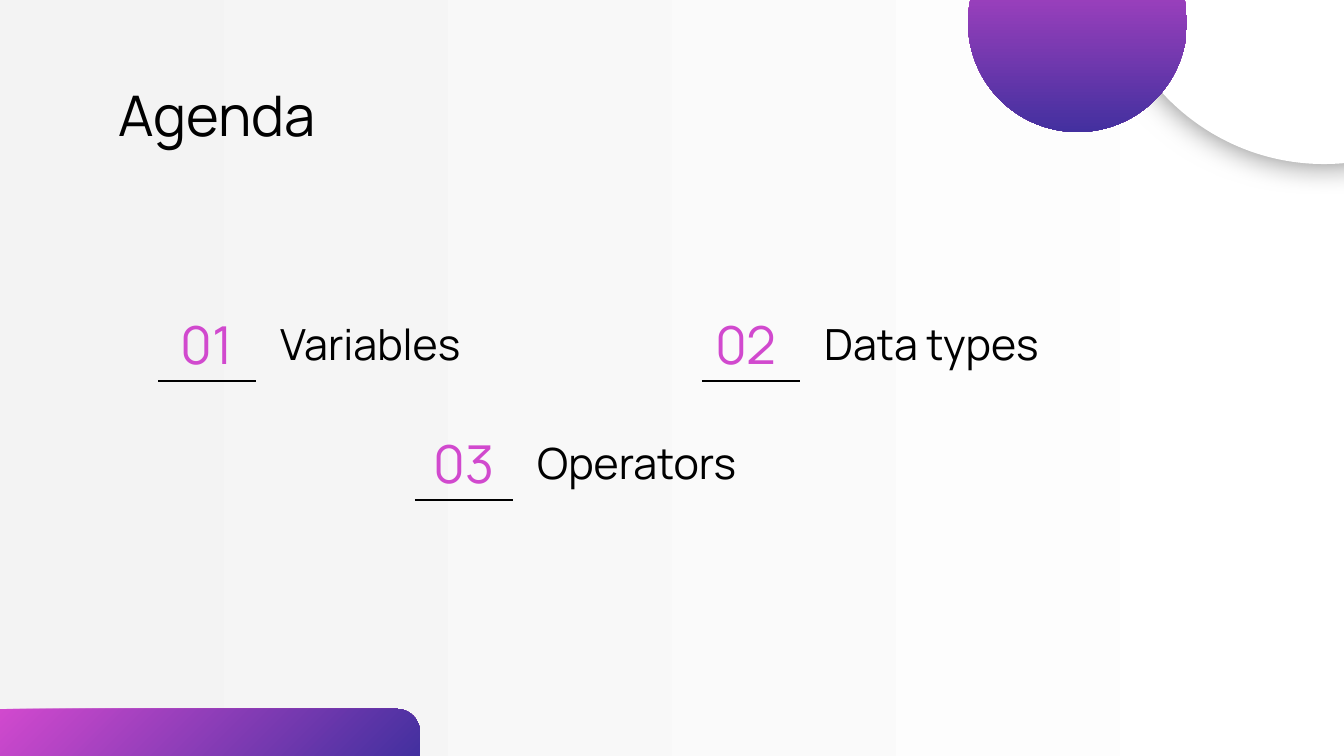
from lxml import etree
from pptx import Presentation
from pptx.dml.color import RGBColor
from pptx.enum.shapes import MSO_CONNECTOR, MSO_SHAPE
from pptx.enum.text import MSO_ANCHOR, PP_ALIGN
from pptx.oxml import parse_xml
from pptx.oxml.ns import nsdecls, qn
from pptx.util import Emu, Inches, Pt

THEME = {
    "font": "Manrope",
    "text": "000000",
    "pink": "D149CE",
    "indigo": "43309F",
    "white": "FFFFFF",
    "grey": "F3F3F3",
    "title_size": 30,
    "number_size": 28,
    "topic_size": 23,
}
PX = 914400 / 134.4


def set_gradient(fill, start, end, angle):
    fill.gradient()
    fill.gradient_angle = angle
    for stop, color in zip(fill.gradient_stops, (start, end)):
        stop.color.rgb = RGBColor.from_string(THEME[color])


def add_text(text, box, size, color, alignment=PP_ALIGN.LEFT):
    shape = slide.shapes.add_textbox(*[Emu(round(value * PX)) for value in box])
    text_frame = shape.text_frame
    text_frame.word_wrap = True
    text_frame.vertical_anchor = MSO_ANCHOR.MIDDLE
    text_frame.margin_left = text_frame.margin_right = Inches(0.1)
    text_frame.margin_top = text_frame.margin_bottom = Inches(0.1)
    text_frame.text = text
    paragraph = text_frame.paragraphs[0]
    paragraph.alignment = alignment
    font = paragraph.runs[0].font
    font.name = THEME["font"]
    font.size = Pt(THEME[size])
    font.color.rgb = RGBColor.from_string(THEME[color])


presentation = Presentation()
presentation.slide_width = Emu(round(1344 * PX))
presentation.slide_height = Emu(round(756 * PX))
slide = presentation.slides.add_slide(presentation.slide_layouts[6])
set_gradient(slide.background.fill, "white", "grey", 180)

decorations = []
for preset, box in [
    (MSO_SHAPE.ROUND_1_RECTANGLE, (0, 709, 420, 47)),
    (MSO_SHAPE.OVAL, (1105, -274, 438, 438)),
    (MSO_SHAPE.OVAL, (968, -87, 219, 219)),
]:
    shape = slide.shapes.add_shape(preset, *[Emu(round(value * PX)) for value in box])
    shape.shadow.inherit = False
    shape.line.fill.background()
    decorations.append(shape)

footer_band, white_circle, purple_circle = decorations
footer_band.adjustments[0] = 0.5
set_gradient(footer_band.fill, "pink", "indigo", 315)
set_gradient(purple_circle.fill, "pink", "indigo", 270)

white_circle.fill.solid()
white_circle.fill.fore_color.rgb = RGBColor.from_string(THEME["white"])
effects = white_circle._element.spPr.find(qn("a:effectLst"))
effects.append(parse_xml(
    f'<a:outerShdw {nsdecls("a")} blurRad="{Pt(16.9)}" dist="0" dir="0" '
    f'algn="ctr" rotWithShape="0"><a:srgbClr val="{THEME["text"]}">'
    '<a:alpha val="50000"/></a:srgbClr></a:outerShdw>'
))

add_text("Agenda", (105, 79, 1134, 70), "title_size", "text")

for number, topic, left, top, alignment in [
    ("01", "Variables", 158, 317, PP_ALIGN.CENTER),
    ("02", "Data types", 702, 317, PP_ALIGN.LEFT),
    ("03", "Operators", 415, 436, PP_ALIGN.CENTER),
]:
    add_text(number, (left, top + 1, 98, 52), "number_size", "pink", alignment)
    add_text(topic, (left + 109, top, 388, 52), "topic_size", "text")
    ends = (left, top + 64, left + 98, top + 64)
    underline = slide.shapes.add_connector(
        MSO_CONNECTOR.STRAIGHT, *[Emu(round(value * PX)) for value in ends]
    )
    underline.line.width = Pt(0.75)
    underline.line.color.rgb = RGBColor.from_string(THEME["text"])
    etree.SubElement(underline._element.spPr, qn("a:effectLst"))

presentation.save("out.pptx")
